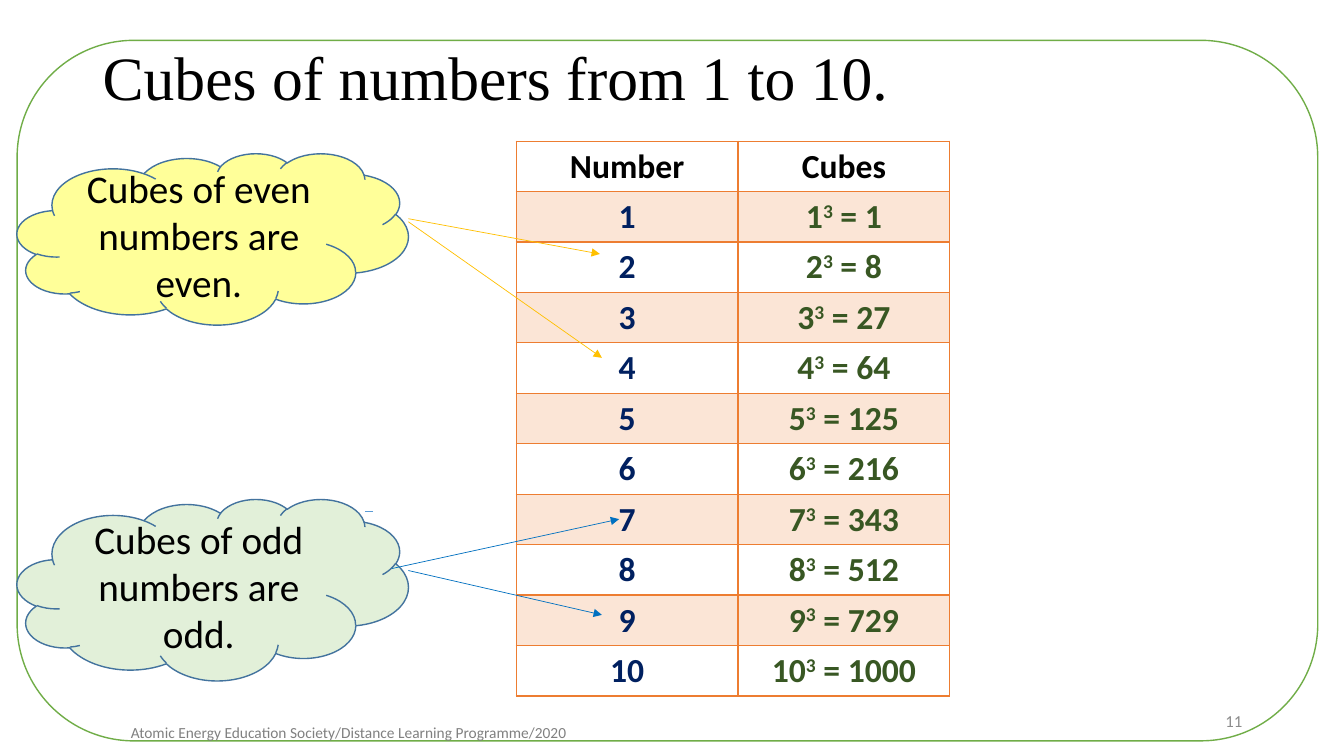
import pptx
import pptx.util
import pptx.dml.color
import pptx.enum.shapes
import pptx.enum.text
import pptx.oxml
import pptx.oxml.ns

Inches = pptx.util.Inches
Pt = pptx.util.Pt
SHAPE = pptx.enum.shapes.MSO_SHAPE
ALIGN = pptx.enum.text.PP_ALIGN
NS = pptx.oxml.ns.nsdecls("a")


def rgb(value):
    """Return the colour for a hex string."""
    return pptx.dml.color.RGBColor.from_string(value)


def style_font(font, size, color, name="Calibri", bold=False):
    """Set the size, colour, face and weight of a font."""
    font.size, font.name, font.bold = Pt(size), name, bold
    font.color.rgb = rgb(color)


def add_text(s, box, text, size, color, align, name="Calibri"):
    """Add a vertically centred one-line text box."""
    tf = s.shapes.add_textbox(*map(Inches, box)).text_frame
    tf.word_wrap = True
    tf.vertical_anchor = pptx.enum.text.MSO_ANCHOR.MIDDLE
    p = tf.paragraphs[0]
    p.text, p.alignment = text, align
    style_font(p.runs[0].font, size, color, name)
    return p


def add_panel(s, kind, box, fill, line):
    """Add a filled and outlined preset shape."""
    sp = s.shapes.add_shape(kind, *map(Inches, box))
    sp.shadow.inherit = False
    sp.fill.solid()
    sp.fill.fore_color.rgb = rgb(fill)
    sp.line.color.rgb = rgb(line)
    sp.line.width = Pt(1)
    return sp


def add_cloud(s, box, text, fill):
    """Add a cloud with a centred remark."""
    sp = add_panel(s, SHAPE.CLOUD, box, fill, "43739E")
    tf = sp.text_frame
    tf.word_wrap = True
    tf.vertical_anchor = pptx.enum.text.MSO_ANCHOR.MIDDLE
    p = tf.paragraphs[0]
    p.text, p.alignment = text, ALIGN.CENTER
    style_font(p.runs[0].font, 28, "000000")


def add_line(s, start, end, color, arrow=True):
    """Add a thin line, with an arrowhead at its end if wanted."""
    points = map(Inches, start + end)
    c = s.shapes.add_connector(pptx.enum.shapes.MSO_CONNECTOR.STRAIGHT, *points)
    c.line.color.rgb = rgb(color)
    c.line.width = Pt(0.5)
    if arrow:
        c.line._get_or_add_ln().append(
            pptx.oxml.parse_xml(f'<a:tailEnd {NS} type="triangle"/>'))
    c._element.spPr.append(pptx.oxml.parse_xml(f"<a:effectLst {NS}/>"))


def fill_cell(cell, parts, color, fill):
    """Write runs in a cell, the second one raised, and set fill and borders."""
    p = cell.text_frame.paragraphs[0]
    p.alignment = ALIGN.CENTER
    for i, text in enumerate(parts):
        r = p.add_run()
        r.text = text
        style_font(r.font, 24, color, bold=True)
        if i == 1:
            r._r.get_or_add_rPr().set("baseline", "30000")
    if fill:
        cell.fill.solid()
        cell.fill.fore_color.rgb = rgb(fill)
    else:
        cell.fill.background()
    tcPr = cell._tc.get_or_add_tcPr()
    for i, side in enumerate("LRTB"):
        tcPr.insert(i, pptx.oxml.parse_xml(
            f'<a:ln{side} {NS} w="12700"><a:solidFill><a:srgbClr val="ED7D31"/>'
            f"</a:solidFill></a:ln{side}>"))


def add_cubes_table(s, box, count):
    """Add the table of numbers and their cubes."""
    table = s.shapes.add_table(count + 1, 2, *map(Inches, box)).table
    table.first_row = table.horz_banding = False
    table.columns[0].width = Inches(2.2)
    table.columns[1].width = Inches(box[2] - 2.2)
    for col, heading in enumerate(("Number", "Cubes")):
        fill_cell(table.cell(0, col), [heading], "000000", None)
    for n in range(1, count + 1):
        fill = "FBE5D6" if n % 2 else None
        fill_cell(table.cell(n, 0), [str(n)], "002060", fill)
        fill_cell(table.cell(n, 1), [str(n), "3", f" = {n ** 3}"], "385723", fill)


def add_remark(s, box, text, fill, arrows, color):
    """Add a cloud and the arrows leading from it to table rows."""
    add_cloud(s, box, text, fill)
    left, top = box[:2]
    for x1, y1, x2, y2 in arrows:
        add_line(s, (left + x1, top + y1), (left + x2, top + y2), color)


def add_footer(s, box):
    """Add the society's name and the slide number."""
    left, top, width, height = box
    add_text(s, (left, top + 0.23, 7.58, 0.18),
             "Atomic Energy Education Society/Distance Learning Programme/2020",
             11, "808080", ALIGN.CENTER)
    add_text(s, (left + width - 3, top, 3, height), "11", 12, "8C8C8C", ALIGN.RIGHT)


def main():
    """Build and save the slide."""
    prs = pptx.Presentation()
    prs.slide_width, prs.slide_height = Inches(13.33), Inches(7.5)
    s = prs.slides.add_slide(prs.slide_layouts[6])
    add_panel(s, SHAPE.ROUNDED_RECTANGLE, (0.17, 0.4, 12.9, 6.95), "FFFFFF", "70AD47")
    title = add_text(s, (0.92, 0.4, 11.5, 0.8), "Cubes of numbers from 1 to 10.",
                     44, "000000", ALIGN.LEFT, "Times New Roman")
    title.line_spacing = 0.9
    add_cubes_table(s, (5.12, 1.4, 4.3, 5.5), 10)
    add_remark(s, (0.17, 4.95, 3.88, 1.8), "Cubes of odd numbers are odd.", "E2F0D9",
               [(3.72, 0.69, 5.97, 0.2), (3.88, 0.71, 5.8, 1.15)], "0070C0")
    add_remark(s, (0.17, 1.52, 3.88, 1.7), "Cubes of even numbers are even.", "FFFF99",
               [(3.88, 0.65, 5.78, 1), (3.88, 0.68, 5.8, 2.03)], "FFC000")
    add_line(s, (3.7, 5.07), (3.62, 5.07), "5B9BD5", arrow=False)
    add_footer(s, (-0.33, 6.95, 12.75, 0.4))
    prs.save("out.pptx")


if __name__ == "__main__":
    main()
